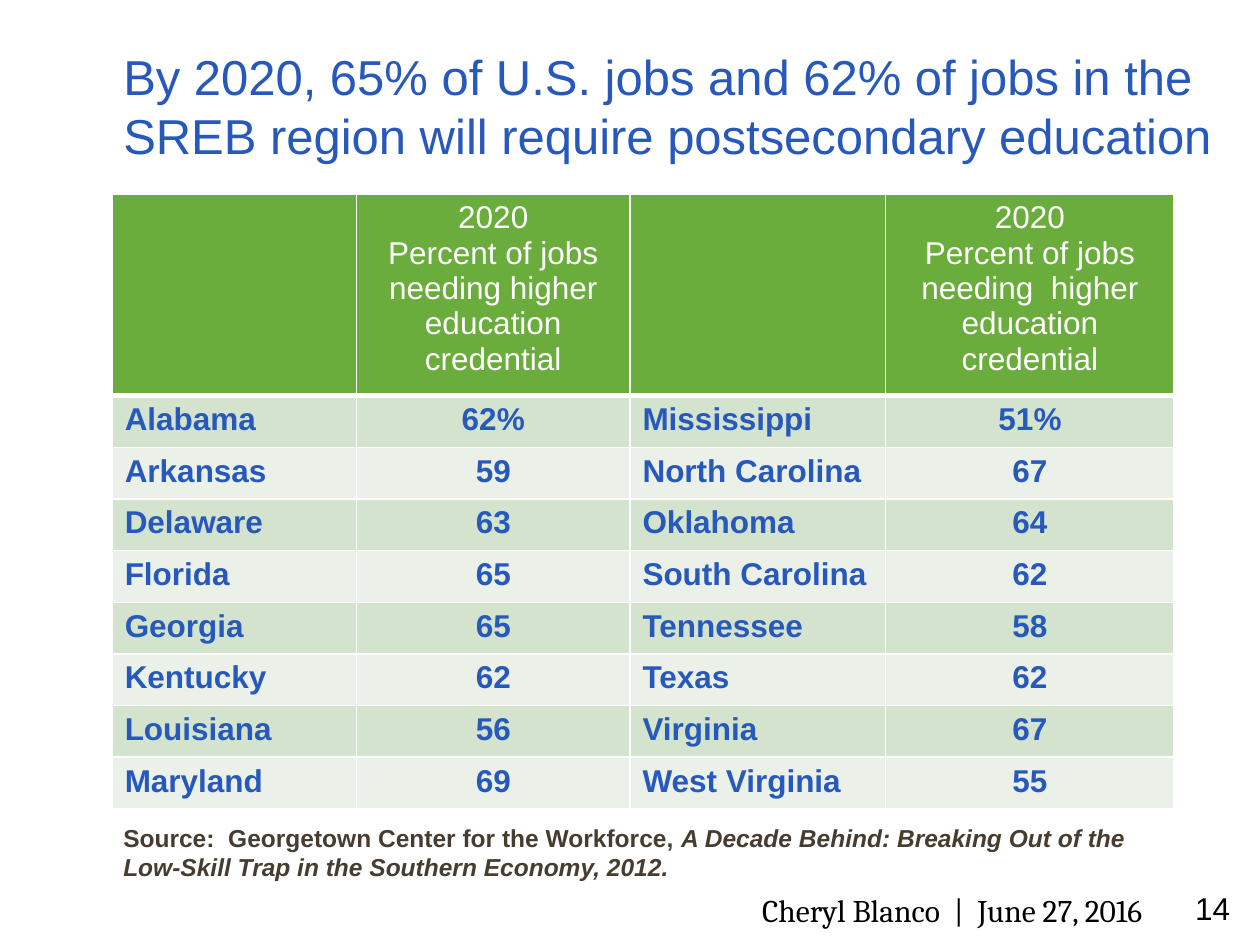
from pptx import Presentation
from pptx import util as u
from pptx.dml.color import RGBColor
from pptx.enum import text as t
from pptx.oxml import parse_xml
from pptx.oxml.ns import nsdecls

BLUE = RGBColor(0x27, 0x58, 0xBC)
GREEN = RGBColor(0x6A, 0xAD, 0x3C)
BANDS = RGBColor(0xD4, 0xE3, 0xCE), RGBColor(0xEB, 0xF1, 0xE8)
BROWN = RGBColor(0x46, 0x3C, 0x30)
WHITE = RGBColor(255, 255, 255)
BLACK = RGBColor(0, 0, 0)
LEFT, MID, RIGHT = t.PP_ALIGN.LEFT, t.PP_ALIGN.CENTER, t.PP_ALIGN.RIGHT

# Content
TITLE = "By 2020, 65% of U.S. jobs and 62% of jobs in the SREB region will require postsecondary education"
HEADS = [
    "",
    "2020\nPercent of jobs needing higher education credential",
    "",
    "2020\nPercent of jobs needing  higher education credential",
]
STATES = [
    ("Alabama", "62%", "Mississippi", "51%"),
    ("Arkansas", "59", "North Carolina", "67"),
    ("Delaware", "63", "Oklahoma", "64"),
    ("Florida", "65", "South Carolina", "62"),
    ("Georgia", "65", "Tennessee", "58"),
    ("Kentucky", "62", "Texas", "62"),
    ("Louisiana", "56", "Virginia", "67"),
    ("Maryland", "69", "West Virginia", "55"),
]
SOURCE = "Source:  Georgetown Center for the Workforce, "
REPORT = "A Decade Behind: Breaking Out of the Low-Skill Trap in the Southern Economy, 2012."
AUTHOR = "Cheryl Blanco  |  June 27, 2016 "
COLS = [1.94, 2.17, 2.03, 2.29]
HEAD_H, ROW_H = 1.49, 0.41

deck = Presentation()
deck.slide_width, deck.slide_height = u.Inches(10), u.Inches(7.5)
slide = deck.slides.add_slide(deck.slide_layouts[6])


def write(frame, words, size=18, color=BLACK, font="Arial", bold=False,
          align=LEFT, italic=""):
    """Fill a frame, one paragraph a line; italic words follow the last."""
    frame.word_wrap = True
    for i, line in enumerate(words.split("\n")):
        para = frame.add_paragraph() if i else frame.paragraphs[0]
        para.alignment = align
        para.font.size = u.Pt(size)
        para.add_run().text = line
    if italic:
        run = para.add_run()
        run.text = italic
        run.font.italic = True
    for para in frame.paragraphs:
        for run in para.runs:
            run.font.name, run.font.size = font, u.Pt(size)
            run.font.bold, run.font.color.rgb = bold, color


def box(place, words, anchor=t.MSO_ANCHOR.MIDDLE, **form):
    frame = slide.shapes.add_textbox(*map(u.Inches, place)).text_frame
    frame.vertical_anchor = anchor
    write(frame, words, **form)


def edge(cell, low):
    """Draw white cell borders; low is the bottom width in points."""
    props = cell._tc.get_or_add_tcPr()
    for i, (side, wide) in enumerate((("L", 1), ("R", 1), ("T", 1), ("B", low))):
        props.insert(i, parse_xml(
            f'<a:ln{side} {nsdecls("a")} w="{u.Pt(wide)}"><a:solidFill>'
            f'<a:srgbClr val="{WHITE}"/></a:solidFill></a:ln{side}>'))


# Title
box((0.88, 0.94, 8.98, 0.41), TITLE, t.MSO_ANCHOR.BOTTOM, size=28, color=BLUE)

# Table of states
rows = [HEADS] + STATES
high = HEAD_H + ROW_H * len(STATES)
grid = slide.shapes.add_table(
    len(rows), len(COLS), *map(u.Inches, (0.89, 1.54, sum(COLS), high))).table
for col, wide in zip(grid.columns, COLS):
    col.width = u.Inches(wide)
for r, row in enumerate(rows):
    grid.rows[r].height = u.Inches(ROW_H if r else HEAD_H)
    for c, words in enumerate(row):
        cell = grid.cell(r, c)
        cell.fill.solid()
        cell.fill.fore_color.rgb = BANDS[(r - 1) % 2] if r else GREEN
        edge(cell, 1 if r else 3)
        write(cell.text_frame, words, color=BLUE if r else WHITE,
              bold=r > 0, align=MID if c % 2 else LEFT)

# Source and footer
box((0.88, 6.48, 8.42, 0.57), SOURCE, t.MSO_ANCHOR.TOP, size=14, color=BROWN,
    bold=True, italic=REPORT)
box((5.78, 7, 3.44, 0.45), AUTHOR, font="Cambria", align=RIGHT)
box((9.24, 6.98, 0.62, 0.45), "14", align=RIGHT)

deck.save("out.pptx")
